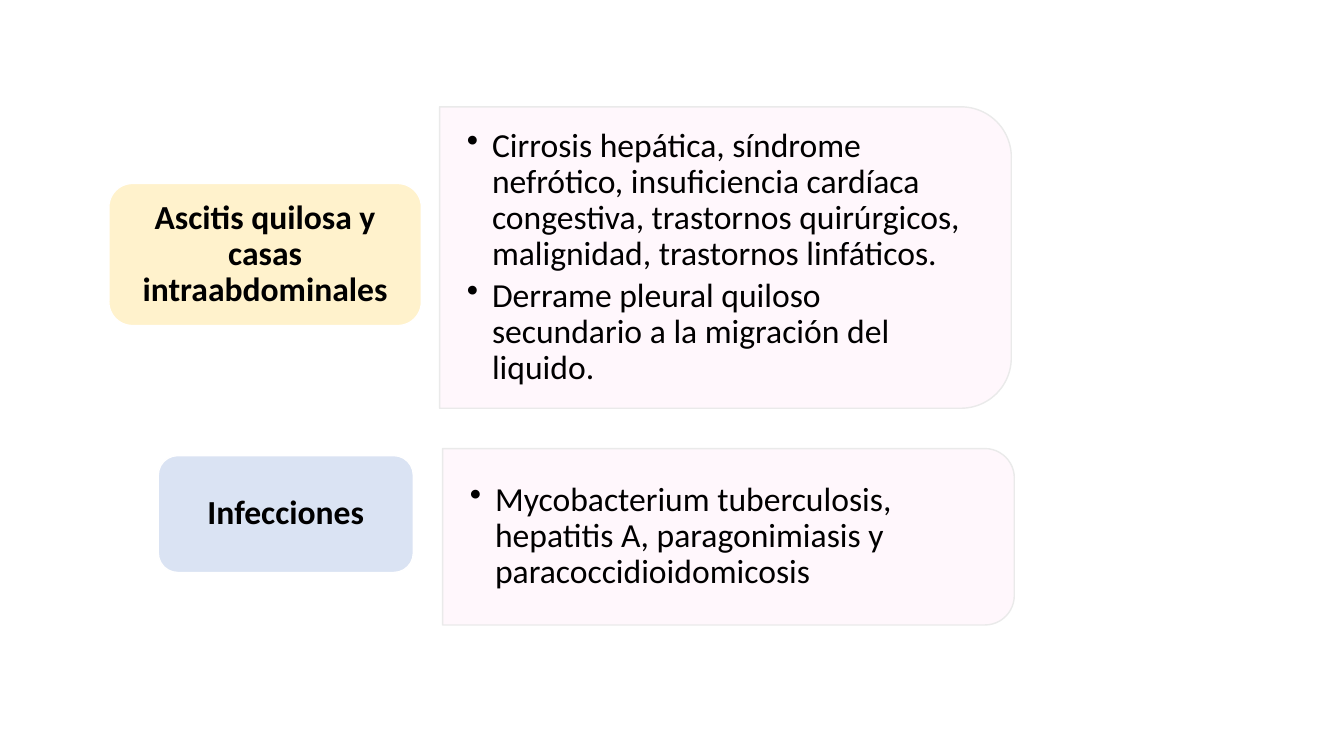
import pptx
import pptx.util
import pptx.dml.color
import pptx.enum.shapes
import pptx.enum.text
import pptx.oxml
import pptx.oxml.ns

Inches = pptx.util.Inches
Pt = pptx.util.Pt
SHAPE = pptx.enum.shapes.MSO_SHAPE
ALIGN = pptx.enum.text.PP_ALIGN


def rgb(color):
    return pptx.dml.color.RGBColor.from_string(color)


class SlideBuilder:
    font = "Calibri"
    size = 24
    ink = "000000"
    panel_fill = "FFF7FC"
    panel_line = "EAEAEA"
    panel_width = 5.67
    text_width = 5.59
    corner_inset = 0.0488

    def __init__(self, slide):
        self.s = slide

    def shape(self, kind, x, y, w, h, fill, line):
        sp = self.s.shapes.add_shape(kind, Inches(x), Inches(y), Inches(w), Inches(h))
        sp.shadow.inherit = False
        sp.fill.solid()
        sp.fill.fore_color.rgb = rgb(fill)
        sp.line.color.rgb = rgb(line)
        sp.line.width = Pt(1)
        return sp

    def frame(self, sp, side, top):
        tf = sp.text_frame
        tf.word_wrap = True
        tf.vertical_anchor = pptx.enum.text.MSO_ANCHOR.MIDDLE
        tf.margin_left = tf.margin_right = Inches(side)
        tf.margin_top = tf.margin_bottom = Inches(top)
        return tf

    def style(self, p, align, bold=False):
        p.alignment = align
        p.line_spacing = 0.9
        for r in p.runs:
            r.font.name = self.font
            r.font.size = Pt(self.size)
            r.font.bold = bold
            r.font.color.rgb = rgb(self.ink)

    def label(self, text, x, y, w, h, fill):
        sp = self.shape(SHAPE.ROUNDED_RECTANGLE, x, y, w, h, fill, "FFFFFF")
        tf = self.frame(sp, 0.17, 0.12)
        tf.text = text
        self.style(tf.paragraphs[0], ALIGN.CENTER, True)

    def bullet(self, p):
        pPr = p._p.get_or_add_pPr()
        pPr.set("marL", str(Inches(0.25)))
        pPr.set("indent", str(-Inches(0.25)))
        pPr.append(pptx.oxml.parse_xml(
            f'<a:buChar {pptx.oxml.ns.nsdecls("a")} char="•"/>'))

    def panel(self, items, x, y, h):
        w = self.panel_width
        shift = (w - h) / 2
        sp = self.shape(SHAPE.ROUND_2_SAME_RECTANGLE, x + shift, y - shift, h, w,
                        self.panel_fill, self.panel_line)
        sp.rotation = 90
        inset = h * self.corner_inset
        box = self.s.shapes.add_textbox(Inches(x), Inches(y + inset),
                                        Inches(self.text_width), Inches(h - 2 * inset))
        tf = self.frame(box, 0.27, 0.14)
        tf.text = "\n".join(items)
        for p in tf.paragraphs:
            self.bullet(p)
            p.level = 1
            p.space_after = Pt(3.6)
            self.style(p, ALIGN.LEFT)


def main():
    prs = pptx.Presentation()
    prs.slide_width = Inches(13.33)
    prs.slide_height = Inches(7.5)
    b = SlideBuilder(prs.slides.add_slide(prs.slide_layouts[6]))
    b.panel(["Mycobacterium tuberculosis, hepatitis A, paragonimiasis y "
             "paracoccidioidomicosis"], 4.39, 4.45, 1.75)
    b.label("Ascitis quilosa y casas intraabdominales", 1.08, 1.82, 3.1, 1.41, "FFF2CC")
    b.label("Infecciones", 1.57, 4.52, 2.53, 1.16, "DAE3F3")
    b.panel(["Cirrosis hepática, síndrome nefrótico, insuficiencia cardíaca congestiva, "
             "trastornos quirúrgicos, malignidad, trastornos linfáticos.",
             "Derrame pleural quiloso secundario a la migración del liquido."],
            4.36, 1.06, 2.99)
    prs.save("out.pptx")


if __name__ == "__main__":
    main()
